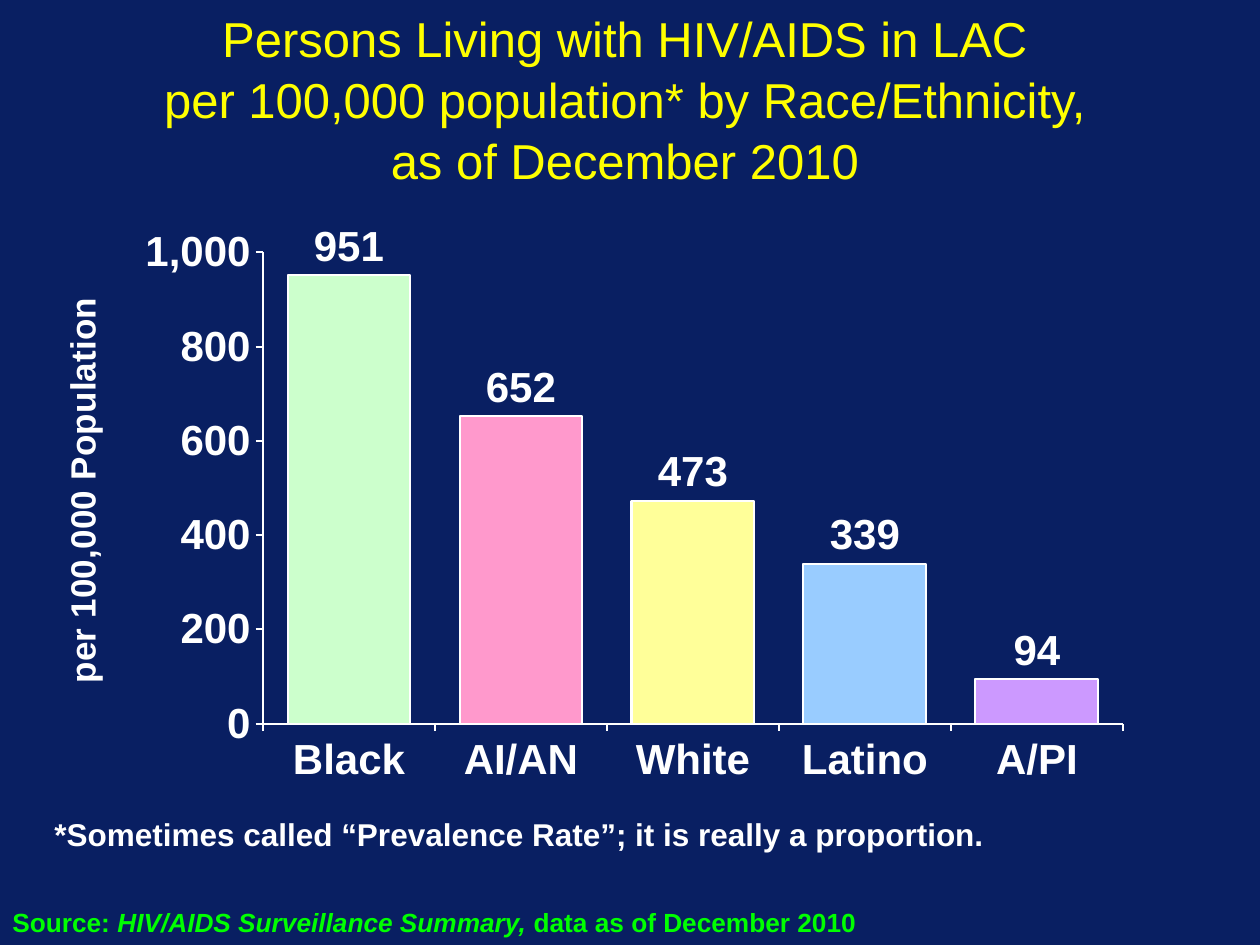
"""Build a slide with a column chart of persons living with HIV/AIDS by race/ethnicity."""
from dataclasses import dataclass

from lxml.etree import SubElement
from pptx import Presentation
from pptx.chart.axis import _BaseAxis
from pptx.chart.chart import Chart
from pptx.chart.data import CategoryChartData
from pptx.dml.color import RGBColor
from pptx.dml.fill import FillFormat
from pptx.dml.line import LineFormat
from pptx.enum.chart import XL_CHART_TYPE, XL_LABEL_POSITION, XL_TICK_MARK
from pptx.enum.text import MSO_AUTO_SIZE, PP_ALIGN
from pptx.oxml.ns import qn
from pptx.oxml.xmlchemy import BaseOxmlElement
from pptx.slide import Slide
from pptx.text.text import Font
from pptx.util import Pt

BACKGROUND, WHITE, YELLOW, GREEN = "091F62", "FFFFFF", "FFFF00", "00FF00"


@dataclass(frozen=True)
class TextRun:
    text: str
    italic: bool = False


@dataclass(frozen=True)
class TextBlock:
    left: float
    top: float
    width: float
    height: float
    paragraphs: tuple[tuple[TextRun, ...], ...]
    size: float
    color: str
    bold: bool = True
    alignment: PP_ALIGN = PP_ALIGN.LEFT
    line_spacing: float = 1.0


@dataclass(frozen=True)
class Column:
    name: str
    value: int
    color: str


TITLE_LINES = (
    "Persons Living with HIV/AIDS in LAC",
    "per 100,000 population* by Race/Ethnicity,",
    "as of December 2010",
)
TEXT_BLOCKS = (
    TextBlock(24, 462, 560, 29, (
        (TextRun("*Sometimes called “Prevalence Rate”; it is really a proportion."),),
    ), 18, WHITE),
    TextBlock(0, 517, 609, 22, ((
        TextRun("Source: "),
        TextRun("HIV/AIDS Surveillance Summary, ", italic=True),
        TextRun("data as of December 2010"),
    ),), 15, GREEN, line_spacing=0.85),
    TextBlock(30, 0, 654, 109, tuple((TextRun(line),) for line in TITLE_LINES),
              28, YELLOW, bold=False, alignment=PP_ALIGN.CENTER, line_spacing=1.04),
)
COLUMNS = (
    Column("Black", 951, "CCFFCC"),
    Column("AI/AN", 652, "FF99CC"),
    Column("White", 473, "FFFF99"),
    Column("Latino", 339, "99CCFF"),
    Column("A/PI", 94, "CC99FF"),
)


def rgb(color: str) -> RGBColor:
    """Turn a hex string into a colour."""
    return RGBColor.from_string(color)


def set_fill(fill: FillFormat, color: str) -> None:
    """Apply a solid fill."""
    fill.solid()
    fill.fore_color.rgb = rgb(color)


def set_line(line: LineFormat) -> None:
    """Apply the white outline shared by axes and columns."""
    set_fill(line.fill, WHITE)
    line.width = Pt(1.15)


def set_font(font: Font, size: float, color: str, bold: bool = True, italic: bool = False) -> None:
    """Style a font in Arial."""
    font.name = "Arial"
    font.size = Pt(size)
    font.bold = bold
    font.italic = italic
    font.color.rgb = rgb(color)


def add_text(slide: Slide, block: TextBlock) -> None:
    """Add one text box."""
    shape = slide.shapes.add_textbox(
        Pt(block.left), Pt(block.top), Pt(block.width), Pt(block.height))
    text_frame = shape.text_frame
    text_frame.word_wrap = True
    text_frame.auto_size = MSO_AUTO_SIZE.SHAPE_TO_FIT_TEXT
    for index, text_runs in enumerate(block.paragraphs):
        paragraph = text_frame.add_paragraph() if index else text_frame.paragraphs[0]
        paragraph.alignment = block.alignment
        paragraph.line_spacing = block.line_spacing
        for text_run in text_runs:
            run = paragraph.add_run()
            run.text = text_run.text
            set_font(run.font, block.size, block.color, block.bold, text_run.italic)


def set_layout(parent: BaseOxmlElement, position: int, **values: float | str) -> None:
    """Place a chart part by a manual layout."""
    for existing in parent.findall(qn("c:layout")):
        parent.remove(existing)
    layout = SubElement(parent, qn("c:layout"))
    parent.insert(position, layout)
    manual = SubElement(layout, qn("c:manualLayout"))
    for name, value in values.items():
        SubElement(manual, qn(f"c:{name}")).set("val", str(value))


def style_axis(axis: _BaseAxis) -> None:
    """Style the line, ticks and labels of an axis."""
    axis.has_major_gridlines = False
    axis.major_tick_mark = XL_TICK_MARK.OUTSIDE
    axis.minor_tick_mark = XL_TICK_MARK.NONE
    set_line(axis.format.line)
    set_font(axis.tick_labels.font, 24, WHITE)


def style_value_axis(chart: Chart) -> None:
    """Set the scale and the rotated title of the value axis."""
    axis = chart.value_axis
    axis.minimum_scale, axis.maximum_scale, axis.major_unit = 0, 1000, 200
    axis.tick_labels.number_format = "#,##0"
    axis.tick_labels.number_format_is_linked = False
    title = axis.axis_title
    title.text_frame.text = "per 100,000 Population"
    set_font(title.text_frame.paragraphs[0].runs[0].font, 20, WHITE)
    title.element.find(f".//{qn('a:bodyPr')}").set("rot", "-5400000")
    set_layout(title.element, 1, xMode="edge", yMode="edge", x=0.02, y=0.15)


def add_column_chart(slide: Slide) -> None:
    """Add the chart with one colour for each column."""
    data = CategoryChartData(number_format="0")
    data.categories = [column.name for column in COLUMNS]
    data.add_series("Series 1", [column.value for column in COLUMNS])
    chart = slide.shapes.add_chart(
        XL_CHART_TYPE.COLUMN_CLUSTERED, Pt(18), Pt(111), Pt(630), Pt(369), data).chart
    chart.has_legend = False
    chart.has_title = False
    set_font(chart.font, 20.7, WHITE)
    style_axis(chart.category_axis)
    style_axis(chart.value_axis)
    style_value_axis(chart)
    set_layout(chart.element.find(f".//{qn('c:plotArea')}"), 0, layoutTarget="inner",
               xMode="edge", yMode="edge", x=0.21, y=0.09, w=0.78, h=0.73)

    plot = chart.plots[0]
    plot.gap_width = 40
    plot.vary_by_categories = False
    series = plot.series[0]
    set_fill(series.format.fill, "99CC00")
    set_line(series.format.line)
    for index, column in enumerate(COLUMNS):
        point_format = series.points[index].format
        set_fill(point_format.fill, column.color)
        set_line(point_format.line)
    labels = series.data_labels
    labels.show_value = True
    labels.number_format = "0"
    labels.number_format_is_linked = False
    labels.position = XL_LABEL_POSITION.OUTSIDE_END
    set_font(labels.font, 24, WHITE)


def main() -> None:
    """Build and save the presentation."""
    presentation = Presentation()
    presentation.slide_width, presentation.slide_height = Pt(720), Pt(540)
    slide = presentation.slides.add_slide(presentation.slide_layouts[6])
    set_fill(slide.background.fill, BACKGROUND)
    add_column_chart(slide)
    for block in TEXT_BLOCKS:
        add_text(slide, block)
    presentation.save("out.pptx")


if __name__ == "__main__":
    main()
